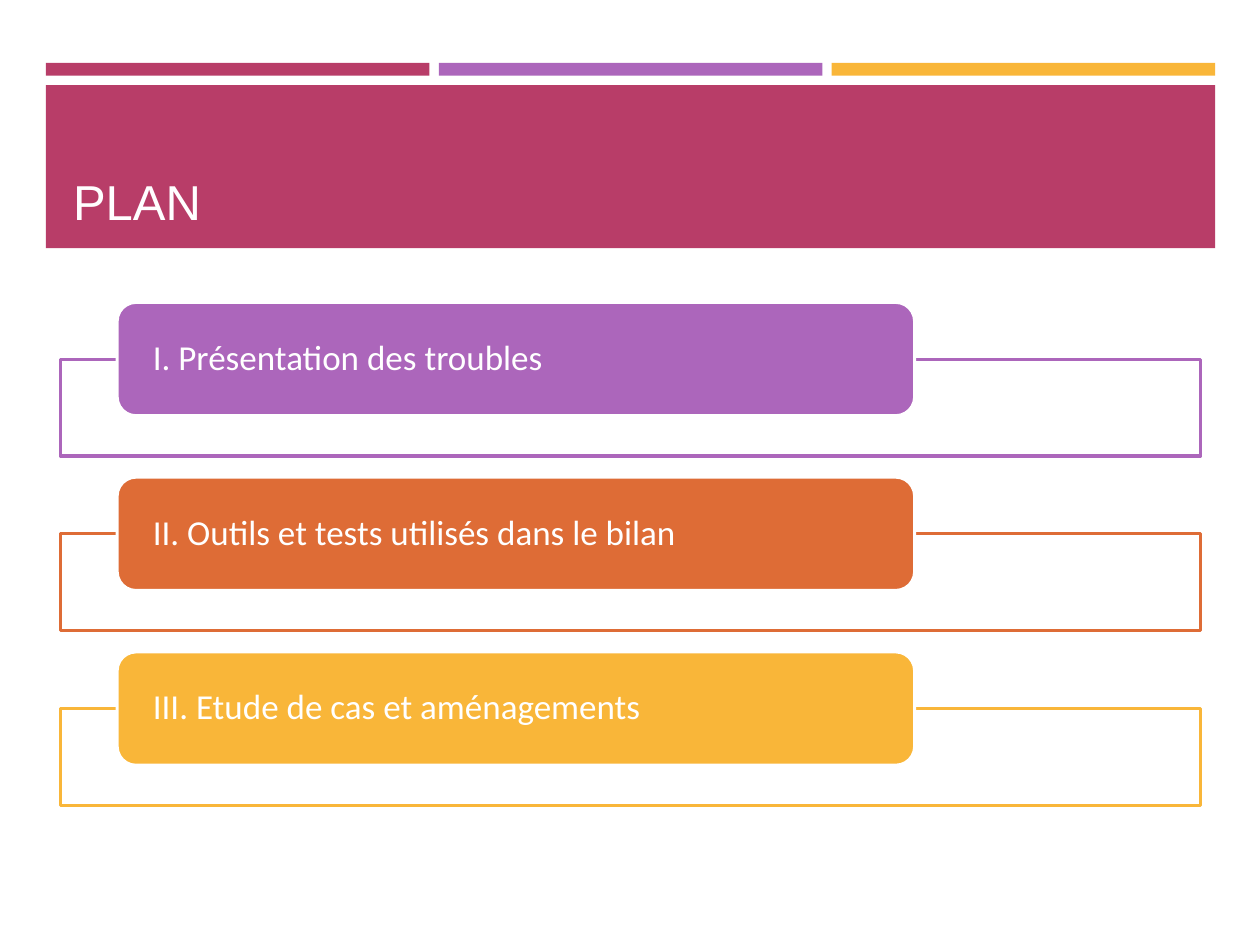
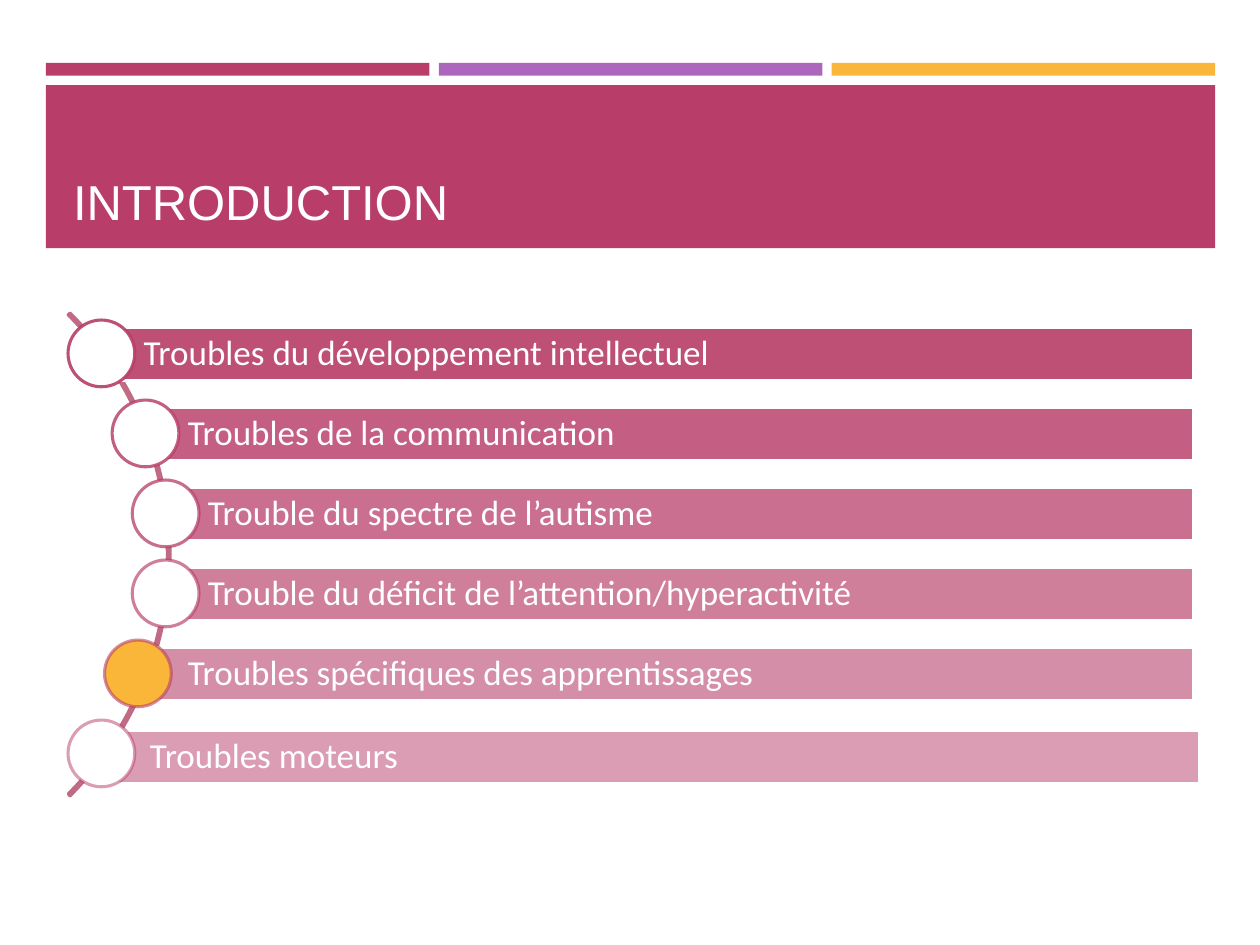
from dataclasses import dataclass

from lxml import etree
from pptx import Presentation
from pptx import util as u
from pptx.dml import color
from pptx.enum import shapes, text
from pptx.oxml import ns

COLORS = {
    "berry": "B83D68",
    "violet": "AC66BB",
    "amber": "F9B639",
    "orange": "DE6C36",
    "rose": "C16A83",
    "white": "FFFFFF",
    "title": "FFFEFF",
}
COLUMNS, ROWS = 100, 75
CELL = u.Inches(0.1)
LINE_WIDTH = 1.75
KIND = shapes.MSO_SHAPE


@dataclass
class Box:
    left: float
    top: float
    width: float
    height: float

    def inner(self, column, row, width, height):
        return Box(self.left + column, self.top + row, width, height)

    def lengths(self):
        return [round(n * CELL) for n in (self.left, self.top, self.width, self.height)]


HEADER = Box(3.65, 5, 92.8, 14.7)
BODY = Box(4.8, 24, 90.5, 40)


def rgb(name):
    return color.RGBColor.from_string(COLORS[name])


def paint(fill, holder, name, opacity=100):
    fill.solid()
    fill.fore_color.rgb = rgb(name)
    if opacity < 100:
        tint = holder.find(ns.qn("a:solidFill")).find(ns.qn("a:srgbClr"))
        etree.SubElement(tint, ns.qn("a:alpha"), val=str(opacity * 1000))


def add_block(page, box, kind=KIND.RECTANGLE, fill=None, opacity=100,
              line=None, line_opacity=100):
    block = page.shapes.add_shape(kind, *box.lengths())
    block.shadow.inherit = False
    frame = block.element.spPr
    if fill:
        paint(block.fill, frame, fill, opacity)
    else:
        block.fill.background()
    if line:
        block.line.width = u.Pt(LINE_WIDTH)
        paint(block.line.fill, frame.find(ns.qn("a:ln")), line, line_opacity)
    else:
        block.line.fill.background()
    return block


def write(shape, words, size=20, font="Calibri", ink="white", spacing=0.9,
          anchor=text.MSO_ANCHOR.MIDDLE, insets=(0.1, 0.05, 0.1, 0.05)):
    frame = shape.text_frame
    frame.word_wrap = True
    frame.vertical_anchor = anchor
    (frame.margin_left, frame.margin_top,
     frame.margin_right, frame.margin_bottom) = map(u.Inches, insets)
    para = frame.paragraphs[0]
    para.alignment = text.PP_ALIGN.LEFT
    para.line_spacing = spacing
    span = para.add_run()
    span.text = words
    span.font.size = u.Pt(size)
    span.font.name = font
    span.font.color.rgb = rgb(ink)


def add_header(page, box, title):
    gap = 0.75
    width = (box.width - 2 * gap) / 3
    for index, name in enumerate(("berry", "violet", "amber")):
        add_block(page, box.inner(index * (width + gap), 0, width, 1), fill=name)
    add_block(page, box.inner(0, 1.75, box.width, 12.95), fill="berry")
    heading = page.shapes.title
    heading.element.getparent().append(heading.element)
    place = box.inner(1.15, 2.7, 90.5, 11.1)
    heading.left, heading.top, heading.width, heading.height = place.lengths()
    write(heading, title, size=28, font="Arial", ink="title", spacing=1,
          anchor=text.MSO_ANCHOR.BOTTOM)


def add_plan(page, box, sections):
    pitch = 13.87
    for index, (words, name) in enumerate(sections):
        row = box.inner(0, index * pitch, box.width, pitch)
        add_block(page, row.inner(0, 4.5, row.width, 7.7), fill="white",
                  opacity=90, line=name)
        label = add_block(page, row.inner(4.5, 0, 63.3, 9), KIND.ROUNDED_RECTANGLE,
                          fill=name, line="white")
        write(label, words, insets=(0.24, 0, 0.24, 0))


def add_arc(page, box):
    arc = add_block(page, box, KIND.BLOCK_ARC, line="rose")
    for index, value in enumerate((189, 27, 0.004)):
        arc.adjustments[index] = value


def add_disorders(page, box, disorders):
    add_arc(page, box.inner(-45.5, -7.1, 54.2, 54.2))
    pitch, dot, bar_height = 6.35, 5.3, 4.2
    right = box.width - 0.6
    for index, (words, bar, circle, shift, fill) in enumerate(disorders):
        opacity = 90 - 8 * index
        row = box.inner(0, 1.4 + index * pitch, box.width, dot)
        strip = add_block(page, row.inner(bar + shift, 0.6 + shift / 2,
                                          right - bar, bar_height),
                          fill="berry", opacity=opacity, line="white")
        write(strip, words, insets=(0.34, 0.06, 0.06, 0.06))
        add_block(page, row.inner(circle, 0, dot, dot), KIND.OVAL, fill=fill,
                  line="berry", line_opacity=opacity)


def add_page(deck, title):
    page = deck.slides.add_slide(deck.slide_layouts[5])
    add_header(page, HEADER, title)
    return page


def main():
    deck = Presentation()
    deck.slide_width, deck.slide_height = COLUMNS * CELL, ROWS * CELL

    add_plan(add_page(deck, "PLAN"), BODY, [
        ("I. Présentation des troubles", "violet"),
        ("II. Outils et tests utilisés dans le bilan", "orange"),
        ("III. Etude de cas et aménagements", "amber"),
    ])
    add_disorders(add_page(deck, "INTRODUCTION"), BODY, [
        ("Troubles du développement intellectuel", 3.2, 0.6, 0, "white"),
        ("Troubles de la communication", 6.7, 4.1, 0, "white"),
        ("Trouble du spectre de l’autisme", 8.3, 5.7, 0, "white"),
        ("Trouble du déficit de l’attention/hyperactivité", 8.3, 5.7, 0, "white"),
        ("Troubles spécifiques des apprentissages", 6.7, 3.5, 0, "amber"),
        ("Troubles moteurs", 3.2, 0.6, 0.5, "white"),
    ])
    deck.save("out.pptx")


if __name__ == "__main__":
    main()
